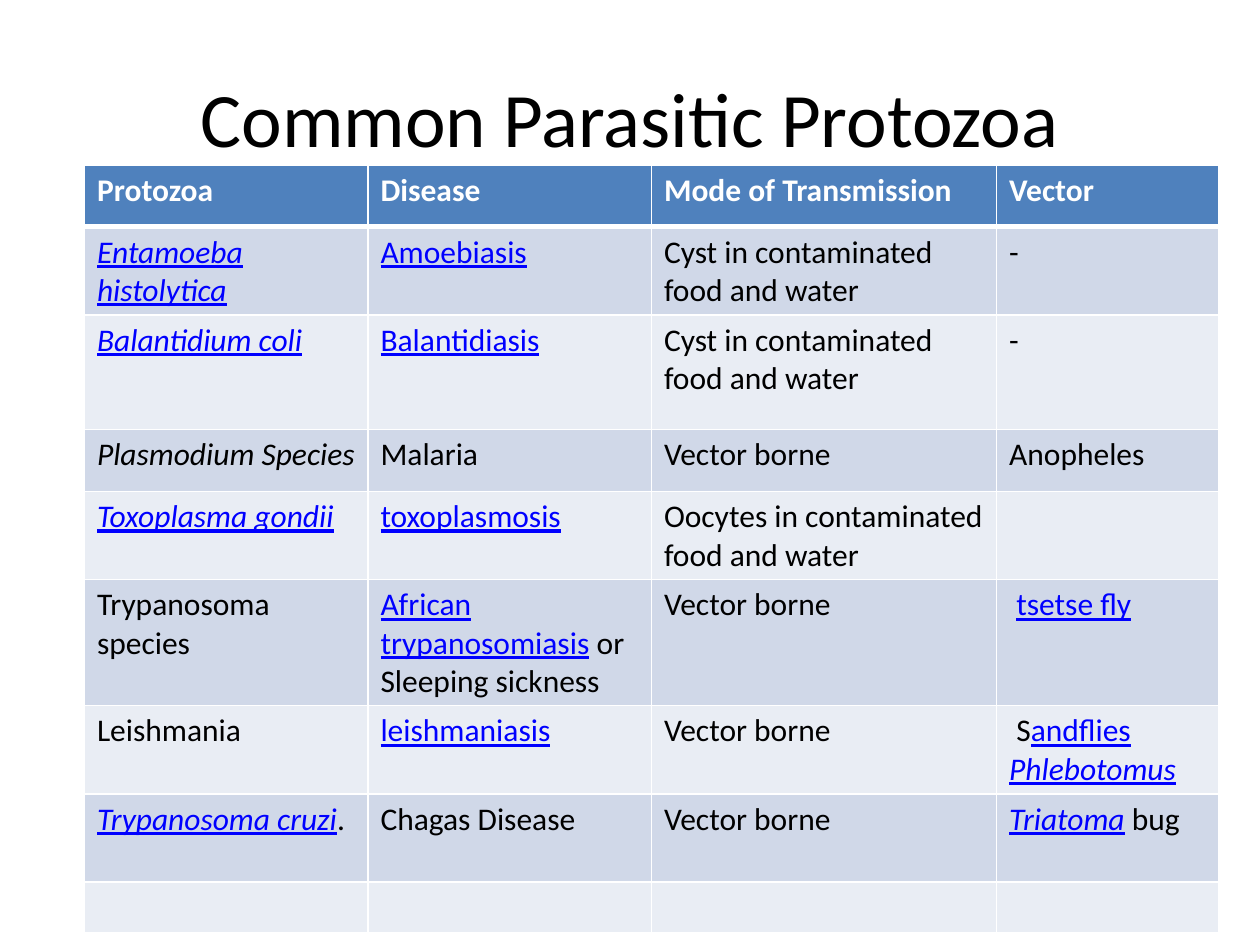
"""Build a slide with a table of common parasitic protozoa."""
import pptx
import pptx.dml.color
import pptx.enum.text
import pptx.oxml
import pptx.oxml.ns
import pptx.util

COLORS = {"header": "4F81BD", "odd": "D0D8E8", "even": "E9EDF4",
          "white": "FFFFFF", "black": "000000", "link": "0000FF"}
STYLES = {
    "title": {"size": 44, "color": "black"},
    "header": {"size": 18, "color": "white", "bold": True},
    "plain": {"size": 18, "color": "black", "bold": False},
    "italic": {"size": 18, "color": "black", "bold": False, "italic": True},
    "link": {"size": 18, "color": "link", "bold": False, "underline": True},
    "species": {"size": 18, "color": "link", "bold": False, "italic": True, "underline": True},
}
TITLE = "Common Parasitic Protozoa"
HEADERS = ["Protozoa", "Disease", "Mode of Transmission", "Vector"]
FOOD_AND_WATER = "Cyst in contaminated food and water"
ROWS = [
    [[("Entamoeba histolytica", "species")], [("Amoebiasis", "link")], FOOD_AND_WATER, "-"],
    [[("Balantidium coli", "species"), (" ", "plain")], [("Balantidiasis", "link")],
     FOOD_AND_WATER, "-"],
    [[("Plasmodium Species", "italic")], "Malaria", "Vector borne", "Anopheles"],
    [[("Toxoplasma gondii", "species")], [("toxoplasmosis", "link")],
     "Oocytes in contaminated food and water", ""],
    ["Trypanosoma species",
     [("African trypanosomiasis", "link"), (" or Sleeping sickness", "plain")],
     "Vector borne", [(" ", "plain"), ("tsetse fly", "link")]],
    ["Leishmania", [("leishmaniasis", "link")], "Vector borne",
     [(" S", "plain"), ("andflies", "link"), ("  ", "plain"), ("Phlebotomus", "species")]],
    [[("Trypanosoma cruzi", "species"), (".", "plain")], "Chagas Disease", "Vector borne",
     [("Triatoma", "species"), (" bug", "plain")]],
    ["", "", "", ""],
]
COLUMN_WIDTHS = [2.25, 2.25, 2.74, 1.76]
ROW_HEIGHTS = [0.49, 0.7, 0.91, 0.49, 0.7, 0.7, 0.7, 0.7, 0.28]


def color(name):
    return pptx.dml.color.RGBColor.from_string(COLORS[name])


def add_runs(paragraph, content, default_style):
    if isinstance(content, str):
        content = [(content, default_style)] if content else []
    for text, style in content:
        run = paragraph.add_run()
        run.text = text
        run.font.name = "Calibri"
        for attribute, value in STYLES[style].items():
            if attribute == "color":
                run.font.color.rgb = color(value)
            else:
                setattr(run.font, attribute, pptx.util.Pt(value) if attribute == "size" else value)


def set_borders(cell, bottom_width, top_width):
    properties = cell._tc.get_or_add_tcPr()
    widths = {"lnL": 1, "lnR": 1, "lnT": top_width, "lnB": bottom_width}
    for position, (tag, width) in enumerate(widths.items()):
        border = pptx.oxml.parse_xml(
            f'<a:{tag} {pptx.oxml.ns.nsdecls("a")} w="{pptx.util.Pt(width)}"><a:solidFill>'
            f'<a:srgbClr val="{COLORS["white"]}"/></a:solidFill></a:{tag}>')
        properties.insert(position, border)


def add_title(slide):
    box = slide.shapes.add_textbox(*map(pptx.util.Inches, (0.5, 0.3, 9, 1.25)))
    frame = box.text_frame
    frame.word_wrap = True
    frame.vertical_anchor = pptx.enum.text.MSO_ANCHOR.MIDDLE
    paragraph = frame.paragraphs[0]
    paragraph.alignment = pptx.enum.text.PP_ALIGN.CENTER
    add_runs(paragraph, TITLE, "title")


def add_protozoa_table(slide):
    place = map(pptx.util.Inches, (0.67, 1.31, sum(COLUMN_WIDTHS), sum(ROW_HEIGHTS)))
    table = slide.shapes.add_table(len(ROW_HEIGHTS), len(COLUMN_WIDTHS), *place).table
    for column, width in zip(table.columns, COLUMN_WIDTHS):
        column.width = pptx.util.Inches(width)
    for row, height in zip(table.rows, ROW_HEIGHTS):
        row.height = pptx.util.Inches(height)
    for row_index, contents in enumerate([HEADERS] + ROWS):
        is_header = row_index == 0
        fill = "header" if is_header else ("odd" if row_index % 2 else "even")
        for column_index, content in enumerate(contents):
            cell = table.cell(row_index, column_index)
            cell.fill.solid()
            cell.fill.fore_color.rgb = color(fill)
            set_borders(cell, 3 if is_header else 1, 3 if row_index == 1 else 1)
            add_runs(cell.text_frame.paragraphs[0], content, "header" if is_header else "plain")


def main():
    presentation = pptx.Presentation()
    presentation.slide_width = pptx.util.Inches(10)
    presentation.slide_height = pptx.util.Inches(7.5)
    slide = presentation.slides.add_slide(presentation.slide_layouts[6])
    add_title(slide)
    add_protozoa_table(slide)
    presentation.save("out.pptx")


if __name__ == "__main__":
    main()
